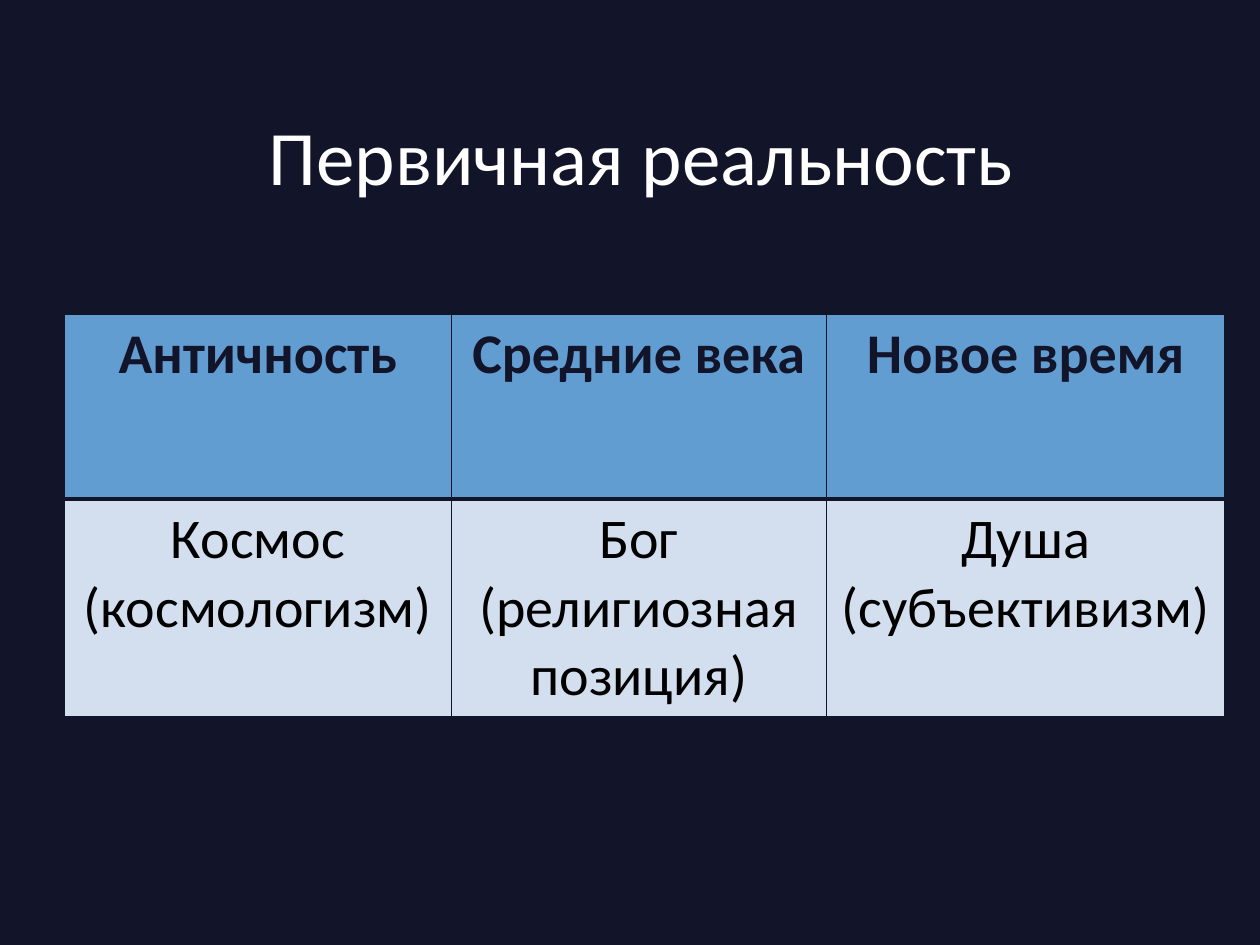
from lxml.etree import SubElement
from pptx import Presentation
from pptx.dml.color import RGBColor
from pptx.enum.text import MSO_ANCHOR, PP_ALIGN
from pptx.oxml.ns import qn
from pptx.util import Cm, Pt

# Content
TITLE = "Первичная реальность"
HEADERS = ["Античность", "Средние века", "Новое время"]
ANSWERS = ["Космос (космологизм)", "Бог\n(религиозная позиция)", "Душа\n(субъективизм)"]

# Look
FONT = "Calibri"
NAVY, WHITE, BLACK = "121429", "FFFFFF", "000000"
ROW_STYLES = [("629DD1", NAVY, True), ("D3DFEE", BLACK, False)]  # fill, text, bold
COLUMN_WIDTHS = [7.8, 7.56, 8.04]
ROW_HEIGHT = 3.73


def paint(target, color):
    """Give a fill a solid colour."""
    target.solid()
    target.fore_color.rgb = RGBColor.from_string(color)


def format_text(frame, size, color, bold=False):
    for para in frame.paragraphs:
        para.alignment = PP_ALIGN.CENTER
        for span in para.runs:
            span.font.name = FONT
            span.font.size = Pt(size)
            span.font.bold = bold
            span.font.color.rgb = RGBColor.from_string(color)


def add_borders(cell, widths):
    """Draw cell borders; line elements must precede the fill."""
    properties = cell._tc.get_or_add_tcPr()
    for index, (side, width) in enumerate(widths.items()):
        line = SubElement(properties, qn(f"a:ln{side}"), w=str(Pt(width)))
        fill = SubElement(line, qn("a:solidFill"))
        SubElement(fill, qn("a:srgbClr"), val=NAVY)
        properties.insert(index, line)


deck = Presentation()
deck.slide_width, deck.slide_height = Cm(25.4), Cm(19.05)
page = deck.slides.add_slide(deck.slide_layouts[5])
paint(page.background.fill, NAVY)

# Title
title = page.shapes.title
title.left, title.top, title.width, title.height = Cm(1.5), Cm(1.52), Cm(22.86), Cm(3.18)
title.text_frame.text = TITLE
title.text_frame.vertical_anchor = MSO_ANCHOR.MIDDLE
format_text(title.text_frame, 44, WHITE)

# Table of eras
rows = [HEADERS, ANSWERS]
table = page.shapes.add_table(
    len(rows), len(HEADERS), Cm(1.3), Cm(6.33),
    Cm(sum(COLUMN_WIDTHS)), Cm(ROW_HEIGHT * len(rows)),
).table
for column, width in zip(table.columns, COLUMN_WIDTHS):
    column.width = Cm(width)

for r, (texts, (fill, color, bold)) in enumerate(zip(rows, ROW_STYLES)):
    table.rows[r].height = Cm(ROW_HEIGHT)
    # The edge between header and answers is thicker
    top, bottom = (1, 3) if r == 0 else (3, 1)
    for c, text in enumerate(texts):
        cell = table.cell(r, c)
        cell.text_frame.text = text
        format_text(cell.text_frame, 32, color, bold)
        paint(cell.fill, fill)
        add_borders(cell, {"L": 1, "R": 1, "T": top, "B": bottom})

deck.save("out.pptx")
